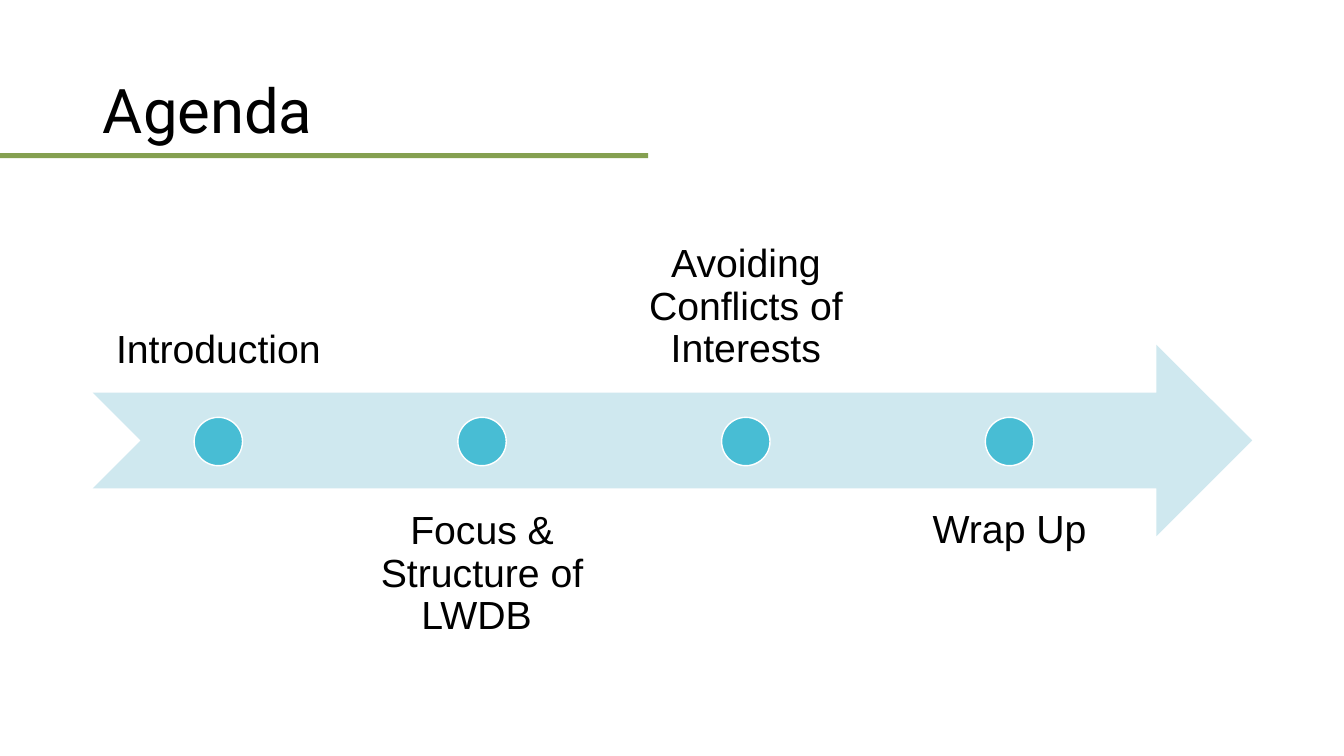
from pptx import Presentation
from pptx.dml.color import RGBColor
from pptx.enum.shapes import MSO_SHAPE
from pptx.enum.text import MSO_ANCHOR, PP_ALIGN
from pptx.util import Inches, Pt


def rgb(value):
    return RGBColor.from_string(value)


def add_filled(shapes, kind, left, top, width, height, fill, line=None):
    sp = shapes.add_shape(kind, Inches(left), Inches(top), Inches(width), Inches(height))
    sp.shadow.inherit = False
    sp.fill.solid()
    sp.fill.fore_color.rgb = rgb(fill)
    if line:
        sp.line.color.rgb = rgb(line)
        sp.line.width = Pt(1)
    else:
        sp.line.fill.background()
    return sp


prs = Presentation()
prs.slide_width = Inches(13.33)
prs.slide_height = Inches(7.5)
s = prs.slides.add_slide(prs.slide_layouts[5])

add_filled(s.shapes, MSO_SHAPE.RECTANGLE, 0, 1.52, 6.43, 0.05, "85A051")

title = s.shapes.title
title.left, title.top = Inches(0.92), Inches(0.4)
title.width, title.height = Inches(11.5), Inches(1.45)
tf = title.text_frame
tf.vertical_anchor = MSO_ANCHOR.MIDDLE
p = tf.paragraphs[0]
p.alignment = PP_ALIGN.LEFT
p.line_spacing = 0.9
r = p.add_run()
r.text = "Agenda"
r.font.name = "Roboto"
r.font.size = Pt(44)
r.font.color.rgb = rgb("000000")

timeline = s.shapes.add_group_shape()
add_filled(timeline.shapes, MSO_SHAPE.NOTCHED_RIGHT_ARROW, 0.92, 3.42, 11.5, 1.9, "CFE8EF")

topics = ["Introduction", "Focus & Structure of LWDB ", "Avoiding Conflicts of Interests", "Wrap Up"]
label_width, label_height, dot_size = 2.49, 1.9, 0.48
pitch = 2.616

for i, topic in enumerate(topics):
    left = 0.92 + i * pitch
    above = i % 2 == 0
    top = 2 if above else 4.85
    label = timeline.shapes.add_textbox(Inches(left), Inches(top), Inches(label_width), Inches(label_height))
    tf = label.text_frame
    tf.word_wrap = True
    tf.vertical_anchor = MSO_ANCHOR.BOTTOM if above else MSO_ANCHOR.TOP
    tf.margin_left = tf.margin_right = tf.margin_top = tf.margin_bottom = Inches(0.22)
    p = tf.paragraphs[0]
    p.alignment = PP_ALIGN.CENTER
    p.line_spacing = 0.9
    r = p.add_run()
    r.text = topic
    r.font.name = "Arial"
    r.font.size = Pt(28)
    r.font.color.rgb = rgb("000000")

    dot_left = left + (label_width - dot_size) / 2
    add_filled(timeline.shapes, MSO_SHAPE.OVAL, dot_left, 4.14, dot_size, dot_size, "48BDD4", "FFFFFF")

prs.save("out.pptx")
